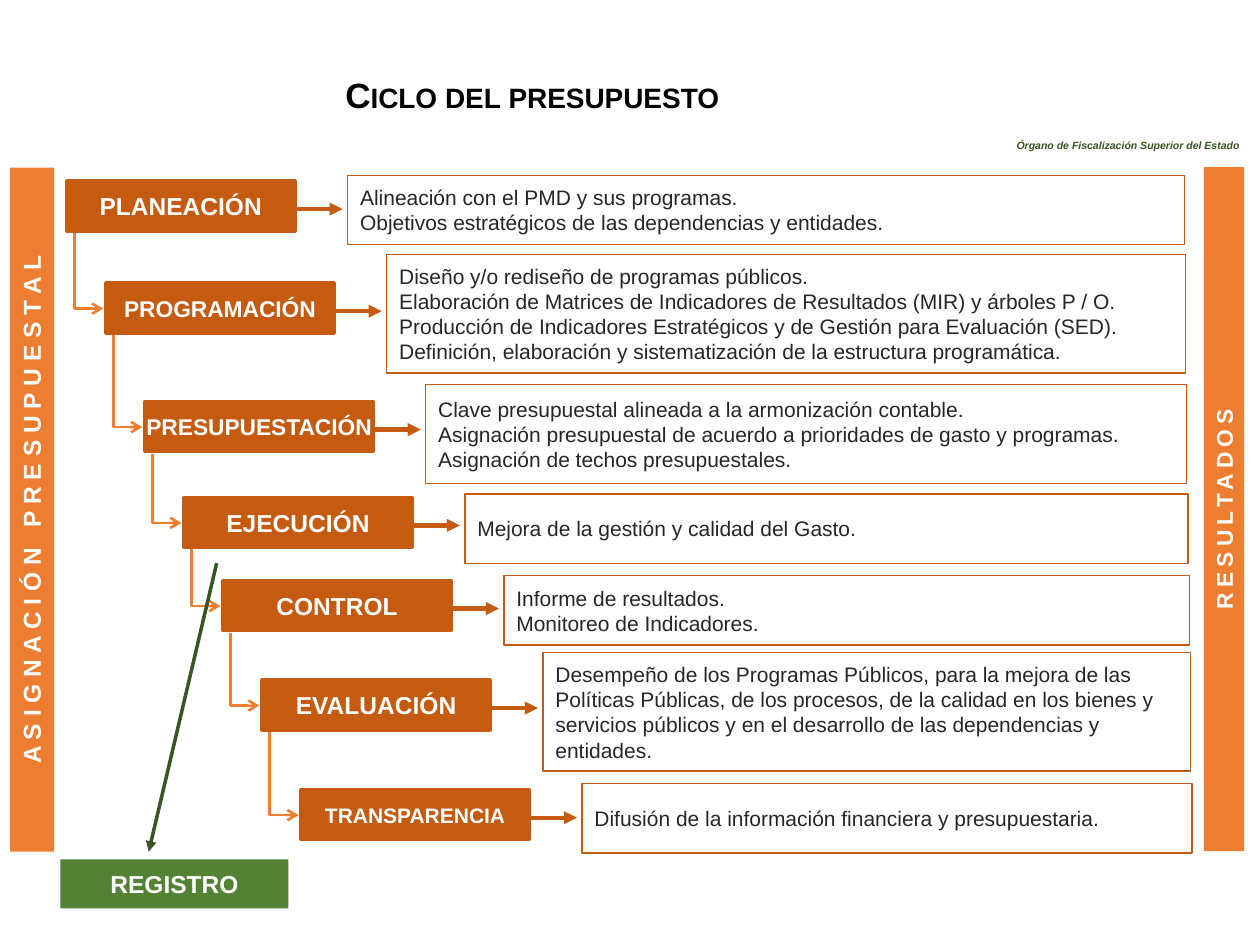
from pptx import Presentation
from pptx.dml.color import RGBColor
from pptx.enum.shapes import MSO_CONNECTOR as Link, MSO_SHAPE as Preset
from pptx.enum.text import MSO_ANCHOR as Anchor, PP_ALIGN as Align
from pptx.oxml.ns import qn
from pptx.util import Inches, Pt
from lxml import etree

WHITE = RGBColor(0xFF, 0xFF, 0xFF)
BLACK = RGBColor(0x00, 0x00, 0x00)
INK = RGBColor(0x26, 0x26, 0x26)
ORANGE = RGBColor(0xED, 0x7D, 0x31)
RUST = RGBColor(0xC5, 0x5A, 0x11)
GREEN = RGBColor(0x54, 0x82, 0x35)
DARK_GREEN = RGBColor(0x38, 0x56, 0x23)

prs = Presentation()
prs.slide_width, prs.slide_height = Inches(10), Inches(7.5)
slide = prs.slides.add_slide(prs.slide_layouts[5])


def add_box(left, top, width, height, lines, size, color, fill,
            border=None, bold=True, align=Align.CENTER, margin=0.1):
    """Add a rectangle with one paragraph per line; border is (colour, points)."""
    box = slide.shapes.add_shape(Preset.RECTANGLE, Inches(left), Inches(top),
                                 Inches(width), Inches(height))
    box.shadow.inherit = False
    box.fill.solid()
    box.fill.fore_color.rgb = fill
    if border:
        box.line.color.rgb, box.line.width = border[0], Pt(border[1])
    else:
        box.line.fill.background()
    frame = box.text_frame
    frame.word_wrap = True
    frame.vertical_anchor = Anchor.MIDDLE
    frame.margin_left = frame.margin_right = Inches(margin)
    frame.text = "\n".join(lines)
    for paragraph in frame.paragraphs:
        paragraph.alignment = align
        font = paragraph.font
        font.name, font.size, font.bold = "Arial", Pt(size), bold
        font.color.rgb = color
    return box


def add_arrow(start, end, color, width, head="triangle", kind=Link.STRAIGHT):
    points = [Inches(value) for value in (*start, *end)]
    arrow = slide.shapes.add_connector(kind, *points)
    arrow.line.color.rgb, arrow.line.width = color, Pt(width)
    etree.SubElement(arrow.line._get_or_add_ln(), qn("a:tailEnd"), type=head)
    etree.SubElement(arrow.element.spPr, qn("a:effectLst"))
    return arrow


# Title and caption
title = slide.shapes.title
title.left, title.top = Inches(2.64), Inches(0.53)
title.width, title.height = Inches(4.98), Inches(0.44)
title.text_frame.text = "Ciclo del presupuesto"
title.text_frame.vertical_anchor = Anchor.TOP
heading = title.text_frame.paragraphs[0]
heading.alignment = Align.LEFT
heading.font.name, heading.font.size, heading.font.bold = "Arial", Pt(20), True
heading.font.color.rgb = BLACK
heading.runs[0].font._element.set("cap", "small")

caption = add_box(7.97, 1.05, 2.03, 0.2, ["Órgano de Fiscalización Superior del Estado"],
                  6, DARK_GREEN, WHITE, align=Align.LEFT)
caption.text_frame.paragraphs[0].font.italic = True

# Vertical side bars: runs are (text, letter spacing in hundredths of a point)
side_bars = [
    (-2.46, 3.87, 0.35, 14, [("A S I G N A C I Ó N", 0), (" ", 780),
                             ("P R E S U P U E S T A L", 0)]),
    (7, 3.88, 0.32, 13, [("RESULTADOS", 300)]),
]
for left, top, height, size, runs in side_bars:
    bar = add_box(left, top, 5.43, height, [""], size, WHITE, ORANGE)
    bar.rotation = 270
    bar.text_frame.vertical_anchor = Anchor.TOP
    for text, spacing in runs:
        run = bar.text_frame.paragraphs[0].add_run()
        run.text = text
        run.font._element.set("spc", str(spacing))

# Stages: name, text size, top, detail top, detail height, detail lines
stages = [
    ("PLANEACIÓN", 14, 1.44, 1.39, 0.55, [
        "Alineación con el PMD y sus programas.",
        "Objetivos estratégicos de las dependencias y entidades."]),
    ("PROGRAMACIÓN", 13, 2.25, 2.02, 0.94, [
        "Diseño y/o rediseño de programas públicos.",
        "Elaboración de Matrices de Indicadores de Resultados (MIR) y árboles P / O.",
        "Producción de Indicadores Estratégicos y de Gestión para Evaluación (SED).",
        "Definición, elaboración y sistematización de la estructura programática."]),
    ("PRESUPUESTACIÓN", 13, 3.19, 3.05, 0.79, [
        "Clave presupuestal alineada a la armonización contable.",
        "Asignación presupuestal de acuerdo a prioridades de gasto y programas.",
        "Asignación de techos presupuestales."]),
    ("EJECUCIÓN", 14, 3.95, 3.92, 0.55, ["Mejora de la gestión y calidad del Gasto."]),
    ("CONTROL", 14, 4.61, 4.57, 0.55, [
        "Informe de resultados.",
        "Monitoreo de Indicadores."]),
    ("EVALUACIÓN", 14, 5.4, 5.18, 0.94, [
        "Desempeño de los Programas Públicos, para la mejora de las Políticas Públicas, "
        "de los procesos, de la calidad en los bienes y servicios públicos y en el "
        "desarrollo de las dependencias y entidades."]),
    ("TRANSPARENCIA", 12, 6.27, 6.22, 0.55, [
        "Difusión de la información financiera y presupuestaria."]),
]
FIRST_LEFT, INDENT = 0.53, 0.31
STAGE_WIDTH, STAGE_HEIGHT = 1.81, 0.39

for i, (name, size, top, detail_top, detail_height, details) in enumerate(stages):
    left = FIRST_LEFT + INDENT * i
    right = left + STAGE_WIDTH
    add_box(left, top, STAGE_WIDTH, STAGE_HEIGHT, [name], size, WHITE, RUST,
            border=(RUST, 2.5), margin=0)
    add_box(left + 2.23, detail_top, 6.64 - 0.3 * i, detail_height, details, 12, INK,
            WHITE, border=(RUST, 0.75), bold=False, align=Align.LEFT)
    add_arrow((right, top + 0.22), (right + 0.38, top + 0.22), RUST, 2.5)

# Elbows run down and then right: a two-segment bend turned by 270 degrees
for i, (stage, following) in enumerate(zip(stages, stages[1:])):
    start_x, end_x = FIRST_LEFT + INDENT * i + 0.06, FIRST_LEFT + INDENT * (i + 1) - 0.02
    start_y, end_y = stage[2] + 0.41, following[2] + 0.2
    mid_x, mid_y = (start_x + end_x) / 2, (start_y + end_y) / 2
    half_run, half_drop = (end_x - start_x) / 2, (end_y - start_y) / 2
    elbow = add_arrow((mid_x + half_drop, mid_y - half_run),
                      (mid_x - half_drop, mid_y + half_run),
                      ORANGE, 1.5, head="arrow", kind=Link.ELBOW)
    shape_props = elbow.element.spPr
    shape_props.find(qn("a:xfrm")).set("rot", str(270 * 60000))
    shape_props.find(qn("a:prstGeom")).set("prst", "bentConnector2")

# Record keeping
add_arrow((1.72, 4.47), (1.18, 6.76), DARK_GREEN, 2)
add_box(0.48, 6.82, STAGE_WIDTH, STAGE_HEIGHT, ["REGISTRO"], 14, WHITE, GREEN)

prs.save("out.pptx")
